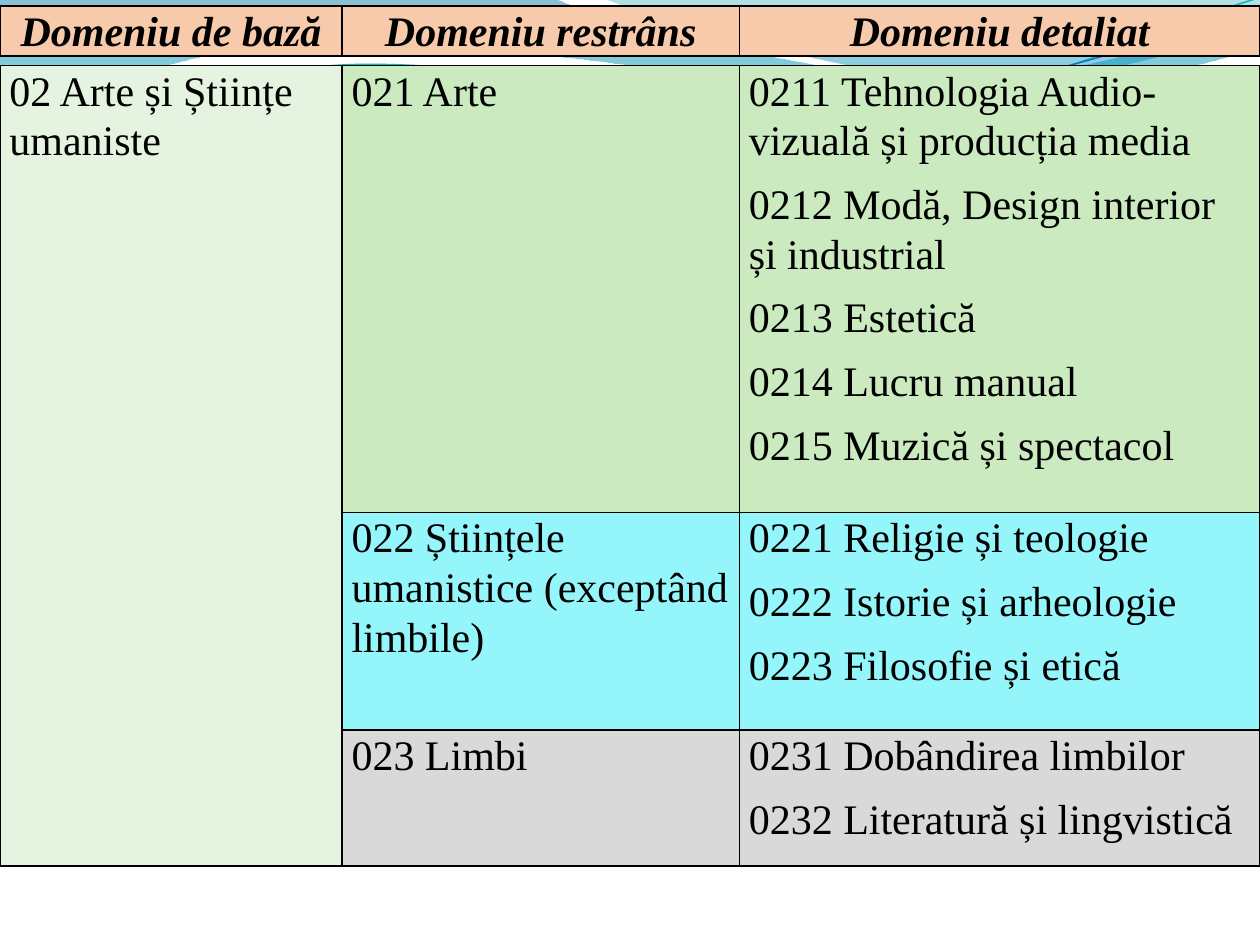
from lxml.etree import SubElement
from pptx import Presentation
from pptx.dml.color import RGBColor
from pptx.enum.text import PP_ALIGN
from pptx.oxml.ns import qn
from pptx.util import Pt

BLACK = RGBColor(0x00, 0x00, 0x00)
PEACH = RGBColor(0xF7, 0xCA, 0xAC)
PALE_GREEN = RGBColor(0xE5, 0xF4, 0xE0)
GREEN = RGBColor(0xCB, 0xEA, 0xC0)
CYAN = RGBColor(0x94, 0xF5, 0xFA)
GREY = RGBColor(0xD9, 0xD9, 0xD9)
DEEP_BLUE = RGBColor(0x00, 0x74, 0xA1)
TURQUOISE = RGBColor(0x00, 0xC6, 0xCF)
TEAL = RGBColor(0x00, 0xA1, 0xA9)
BLUE = RGBColor(0x00, 0x8B, 0xBF)
LINE_TEAL = RGBColor(0x0A, 0xB8, 0xBF)
LINE_BLUE = RGBColor(0x0F, 0x6F, 0xC6)

FONT = "Times New Roman"
COLUMN_WIDTHS = (195.5, 227, 297.5)

# Outlines in points: a pair is a straight step, six numbers are a Bezier curve
WIDE_WAVE = [(0, 0), (317, -1), (343, 12, 478, 45, 546, 45),
             (614, 45, 690, 19, 720, 6), (721, 26),
             (708, 32, 626, 55, 537, 54), (448, 54, 275, 20, 185, 24),
             (93, 26, 33, 60, -1, 81), (0, 0)]
RIGHT_WAVE = [(345, -1), (366, 8, 491, 45, 554, 47),
              (620, 50, 692, 23, 720, 15), (720, 0), (345, -1)]
TEAL_CURVE = [(0, 80), (35, 67, 114, 41, 199, 37),
              (284, 34, 427, 64, 513, 58), (600, 51, 675, 11, 719, -1)]
BLUE_CURVE = [(0, 75), (34, 69, 118, 44, 204, 40),
              (290, 37, 430, 60, 516, 54), (602, 48, 678, 15, 720, 4)]

HEADINGS = ["Domeniu de bază", "Domeniu restrâns", "Domeniu detaliat"]
BASE_FIELD = "02 Arte și Științe umaniste"
# Row height, fill, narrow field, detailed fields
FIELDS = [
    (255.25, GREEN, "021 Arte",
     ["0211 Tehnologia Audio-vizuală și producția media",
      "0212 Modă, Design interior și industrial",
      "0213 Estetică", "0214 Lucru manual", "0215 Muzică și spectacol"]),
    (124.5, CYAN, "022 Științele umanistice (exceptând limbile)",
     ["0221 Religie și teologie", "0222 Istorie și arheologie",
      "0223 Filosofie și etică"]),
    (77.75, GREY, "023 Limbi",
     ["0231 Dobândirea limbilor", "0232 Literatură și lingvistică"]),
]


def add_outline(slide, steps, close):
    start, *others = steps
    points = [(Pt(step[index]), Pt(step[index + 1]))
              for step in others for index in range(0, len(step), 2)]
    builder = slide.shapes.build_freeform(Pt(start[0]), Pt(start[1]))
    builder.add_line_segments(points, close=close)
    shape = builder.convert_to_shape()
    shape.shadow.inherit = False
    # Join each three points of a curved step into one Bezier segment
    segments = iter(list(shape._element.iter(qn("a:lnTo"))))
    for step in others:
        segment = next(segments)
        if len(step) == 6:
            curve = segment.makeelement(qn("a:cubicBezTo"))
            segment.addprevious(curve)
            for part in (segment, next(segments), next(segments)):
                curve.append(part[0])
                part.getparent().remove(part)
    return shape


def add_wave(slide, steps, stops):
    shape = add_outline(slide, steps, close=True)
    shape.line.fill.background()
    shape.fill.gradient()
    shape.fill.gradient_angle = 270
    for stop, (position, color, _) in zip(shape.fill.gradient_stops, stops):
        stop.position = position
        stop.color.rgb = color
    colors = shape._element.spPr.iter(qn("a:srgbClr"))
    for color, (_, _, opacity) in zip(list(colors), stops):
        SubElement(color, qn("a:alpha"), val=str(opacity * 1000))


def add_curve(slide, steps, color, width):
    shape = add_outline(slide, steps, close=False)
    shape.fill.background()
    shape.line.color.rgb = color
    shape.line.width = Pt(width)


def add_table(slide, top, row_heights):
    frame = slide.shapes.add_table(
        len(row_heights), len(COLUMN_WIDTHS), Pt(0), Pt(top),
        Pt(sum(COLUMN_WIDTHS)), Pt(sum(row_heights)))
    table = frame.table
    table.first_row = table.horz_banding = False
    for column, width in zip(table.columns, COLUMN_WIDTHS):
        column.width = Pt(width)
    for row, height in zip(table.rows, row_heights):
        row.height = Pt(height)
    return table


def format_cell(cell, fill, edges="LRTB"):
    cell.margin_left = cell.margin_right = Pt(5.4)
    cell.margin_top = cell.margin_bottom = Pt(0)
    properties = cell._tc.get_or_add_tcPr()
    for edge in "LRTB":
        border = SubElement(properties, qn(f"a:ln{edge}"), w=str(Pt(1)))
        if edge in edges:
            solid = SubElement(border, qn("a:solidFill"))
            SubElement(solid, qn("a:srgbClr"), val=str(BLACK))
        else:
            SubElement(border, qn("a:noFill"))
    cell.fill.solid()
    cell.fill.fore_color.rgb = fill


def write_text(cell, lines, *, size=24, color=BLACK, bold=False,
               italic=False, align=PP_ALIGN.LEFT):
    text_frame = cell.text_frame
    for index, line in enumerate(lines):
        paragraph = (text_frame.add_paragraph() if index
                     else text_frame.paragraphs[0])
        paragraph.alignment = align
        paragraph.line_spacing = 1.07
        paragraph.space_after = Pt(8)
        run = paragraph.add_run()
        run.text = line
        run.font.name = FONT
        run.font.size = Pt(size)
        run.font.bold = bold
        run.font.italic = italic
        run.font.color.rgb = color


def main():
    presentation = Presentation()
    presentation.slide_width = Pt(720)
    presentation.slide_height = Pt(540)
    slide = presentation.slides.add_slide(presentation.slide_layouts[6])

    # Waves along the top
    add_wave(slide, WIDE_WAVE, [(0, DEEP_BLUE, 45), (1, TURQUOISE, 55)])
    add_wave(slide, RIGHT_WAVE, [(0, TEAL, 30), (0.8, BLUE, 45)])
    add_curve(slide, TEAL_CURVE, LINE_TEAL, 0.85)
    add_curve(slide, BLUE_CURVE, LINE_BLUE, 0.75)

    # Heading row
    heading_table = add_table(slide, 3.5, [27])
    for column, heading in enumerate(HEADINGS):
        cell = heading_table.cell(0, column)
        format_cell(cell, PEACH)
        write_text(cell, [heading], bold=True, italic=True,
                   align=PP_ALIGN.CENTER)

    # Fields of study; the first column has no inner borders
    field_table = add_table(slide, 37.5, [field[0] for field in FIELDS])
    base_edges = ("LRT", "LR", "LRB")
    for row, (_, fill, narrow_field, details) in enumerate(FIELDS):
        format_cell(field_table.cell(row, 0), PALE_GREEN, base_edges[row])
        for column, lines in enumerate(([narrow_field], details), start=1):
            cell = field_table.cell(row, column)
            format_cell(cell, fill)
            write_text(cell, lines)
    write_text(field_table.cell(0, 0), [BASE_FIELD])

    presentation.save("out.pptx")


if __name__ == "__main__":
    main()
